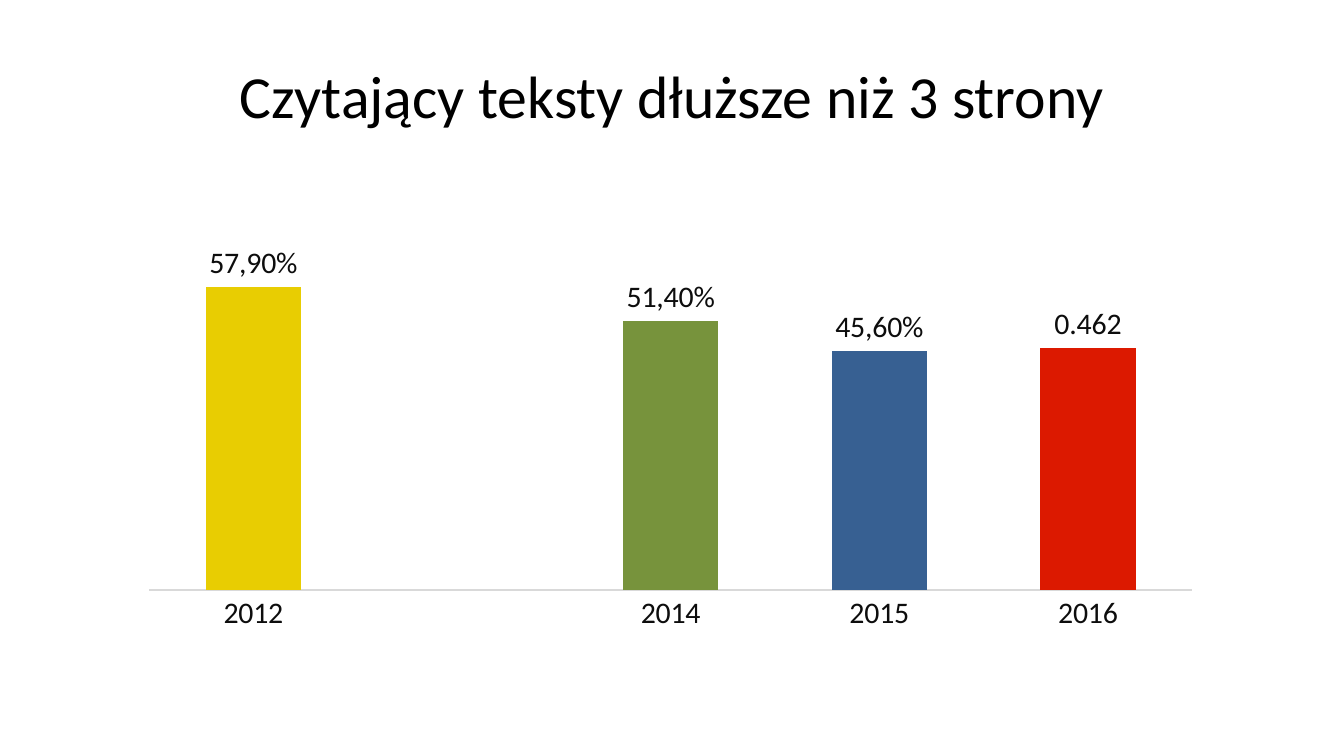
import pptx
import pptx.chart.data
import pptx.dml.color
import pptx.enum.chart
import pptx.enum.text
import pptx.oxml
import pptx.oxml.ns
import pptx.util
from pptx.util import Inches

BLACK = pptx.dml.color.RGBColor(0x00, 0x00, 0x00)
INK = pptx.dml.color.RGBColor(0x0D, 0x0D, 0x0D)
GRAY = pptx.dml.color.RGBColor(0xD9, 0xD9, 0xD9)
YELLOW = pptx.dml.color.RGBColor(0xE8, 0xCD, 0x02)
GREEN = pptx.dml.color.RGBColor(0x77, 0x93, 0x3C)
BLUE = pptx.dml.color.RGBColor(0x37, 0x60, 0x92)
RED = pptx.dml.color.RGBColor(0xDC, 0x19, 0x00)
FONT = "Calibri"


def format_font(font, size, color):
    font.name = FONT
    font.size = pptx.util.Pt(size)
    font.bold = False
    font.color.rgb = color


def write_text(tf, text, size=16, color=INK, align=pptx.enum.text.PP_ALIGN.CENTER):
    p = tf.paragraphs[0]
    p.alignment = align
    r = p.add_run()
    r.text = text
    format_font(r.font, size, color)


prs = pptx.Presentation()
prs.slide_width = Inches(10)
prs.slide_height = Inches(10) * 9 // 16
s = prs.slides.add_slide(prs.slide_layouts[5])

title = s.shapes.title
title.left, title.top = Inches(1.65), Inches(0.39)
title.width, title.height = Inches(6.7), Inches(0.64)
tf = title.text_frame
tf.word_wrap = False
tf.auto_size = pptx.enum.text.MSO_AUTO_SIZE.SHAPE_TO_FIT_TEXT
tf.vertical_anchor = pptx.enum.text.MSO_ANCHOR.TOP
write_text(tf, "Czytający teksty dłuższe niż 3 strony", size=32, color=BLACK)

data = pptx.chart.data.CategoryChartData()
data.categories = ["2012", "", "2014", "2015", "2016"]
data.add_series("Series 1", [0.579, None, 0.514, 0.456, 0.462])
chart = s.shapes.add_chart(
    pptx.enum.chart.XL_CHART_TYPE.COLUMN_CLUSTERED,
    Inches(0.93), Inches(1.22), Inches(8.12), Inches(3.68), data,
).chart
chart.has_legend = False
chart.has_title = False
format_font(chart.font, 10, BLACK)

axis = chart.category_axis
axis.major_tick_mark = pptx.enum.chart.XL_TICK_MARK.NONE
axis.format.line.color.rgb = GRAY
axis.format.line.width = pptx.util.Pt(0.75)
format_font(axis.tick_labels.font, 16, INK)

axis = chart.value_axis
axis.minimum_scale = 0
axis.maximum_scale = 0.7
axis.has_major_gridlines = False
axis.visible = False

plot = chart.plots[0]
plot.gap_width = 119
plot.overlap = 61
plot.vary_by_categories = False

series = plot.series[0]
series.format.fill.solid()
series.format.fill.fore_color.rgb = BLUE
for i, color in {0: YELLOW, 2: GREEN, 3: BLUE, 4: RED}.items():
    fill = series.points[i].format.fill
    fill.solid()
    fill.fore_color.rgb = color

for i, text in {0: "57,90%", 2: "51,40%", 3: "45,60%"}.items():
    label = series.points[i].data_label
    write_text(label.text_frame, text)
    label.position = pptx.enum.chart.XL_LABEL_POSITION.OUTSIDE_END

labels = series.data_labels
labels.show_value = True
labels.number_format = "General"
labels.number_format_is_linked = False
labels.position = pptx.enum.chart.XL_LABEL_POSITION.OUTSIDE_END
format_font(labels.font, 16, INK)

area = chart.element.find(".//" + pptx.oxml.ns.qn("c:plotArea"))
for layout in area.findall(pptx.oxml.ns.qn("c:layout")):
    area.remove(layout)
area.insert(0, pptx.oxml.parse_xml(
    f'<c:layout {pptx.oxml.ns.nsdecls("c")}><c:manualLayout>'
    '<c:layoutTarget val="inner"/><c:xMode val="edge"/><c:yMode val="edge"/>'
    '<c:x val="0.022"/><c:y val="0.121"/><c:w val="0.956"/><c:h val="0.741"/>'
    '</c:manualLayout></c:layout>'
))

prs.save("out.pptx")
